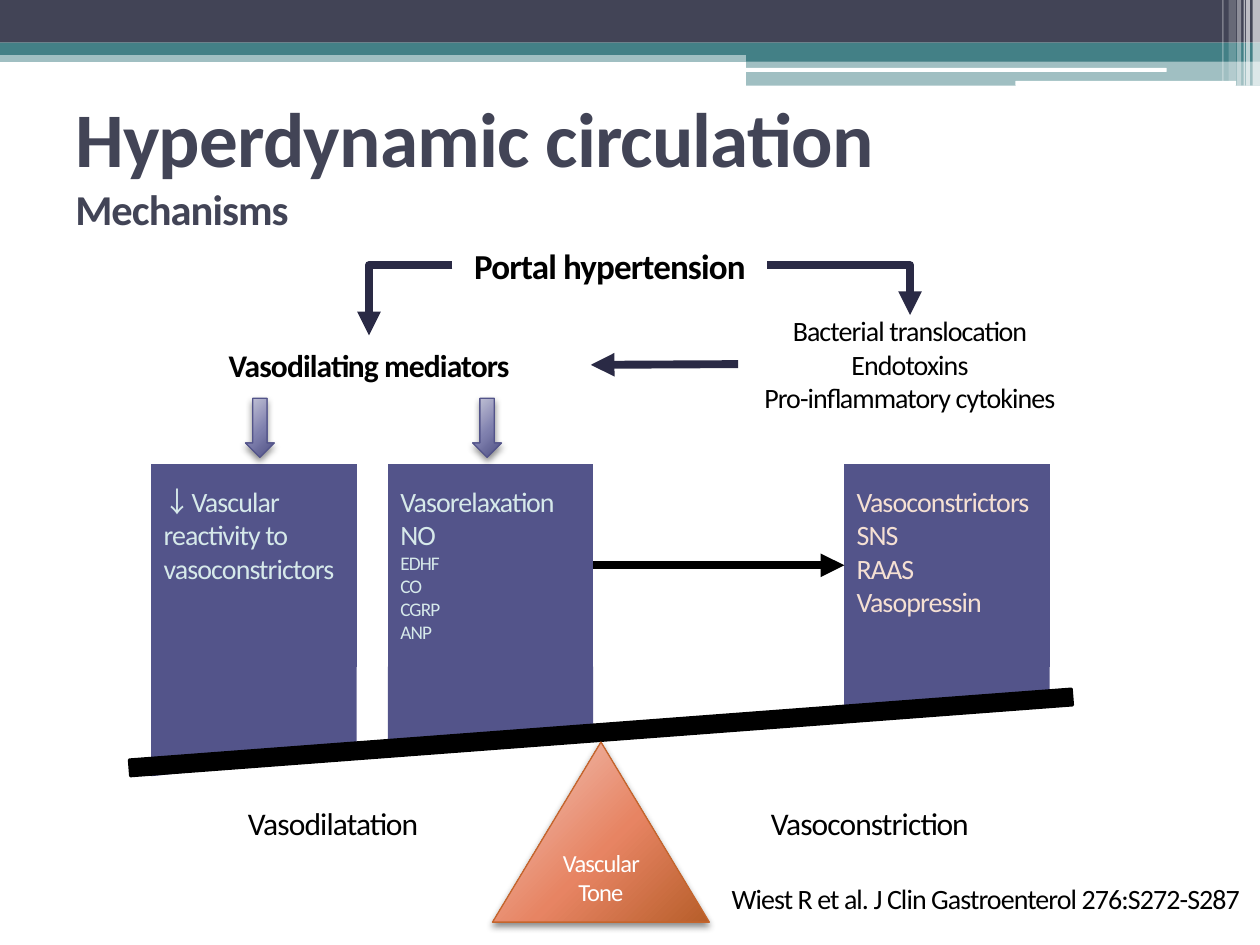
from dataclasses import dataclass
from typing import Optional

from lxml.etree import SubElement
from pptx import Presentation
from pptx.dml.color import RGBColor
from pptx.enum.shapes import MSO_CONNECTOR, MSO_SHAPE
from pptx.enum.text import MSO_ANCHOR, MSO_AUTO_SIZE, PP_ALIGN
from pptx.oxml import parse_xml
from pptx.oxml.ns import nsdecls, qn
from pptx.util import Cm, Pt

FONT = "Calibri"
ARROW_FONT = "Noto Sans CJK KR"
WHITE = RGBColor(0xFF, 0xFF, 0xFF)
BLACK = RGBColor(0x00, 0x00, 0x00)
SLATE = RGBColor(0x42, 0x44, 0x56)
TEAL = RGBColor(0x43, 0x80, 0x86)
VIOLET = RGBColor(0x53, 0x54, 0x8A)
NAVY = RGBColor(0x2A, 0x2A, 0x45)
MINT = RGBColor(0xD6, 0xE9, 0xEA)
PEACH = RGBColor(0xF5, 0xE0, 0xD3)
RUST = RGBColor(0xC4, 0x65, 0x2D)
LILAC_FADE = (RGBColor(0xC9, 0xC9, 0xDA), RGBColor(0x7F, 0x80, 0xAE),
              RGBColor(0x4D, 0x4E, 0x81))
CORAL_FADE = (RGBColor(0xF2, 0xC9, 0xBF), RGBColor(0xE7, 0x84, 0x63),
              RGBColor(0xB7, 0x5E, 0x2A))


@dataclass
class Band:
    x: float
    y: float
    w: float
    h: float
    color: RGBColor
    alpha: int = 100
    kind: MSO_SHAPE = MSO_SHAPE.RECTANGLE


@dataclass
class Line:
    text: str
    size: float = 16


@dataclass
class Column:
    x: float
    base: float
    color: RGBColor
    lines: list[Line]


@dataclass
class Label:
    x: float
    y: float
    w: float
    h: float
    lines: list[Line]
    bold: bool = False


BANDS = [
    Band(0, 1.02, 25.4, 0.23, TEAL, 50),
    Band(0, 0, 25.4, 0.86, SLATE),
    Band(0, 0.86, 25.4, 0.25, TEAL),
    Band(15.04, 0.99, 10.36, 0.25, TEAL),
    Band(15.04, 1.22, 10.36, 0.51, TEAL, 50),
    Band(15.01, 1.37, 8.51, 0.08, WHITE, 100, MSO_SHAPE.ROUNDED_RECTANGLE),
    Band(20.47, 1.63, 4.45, 0.1, WHITE, 100, MSO_SHAPE.ROUNDED_RECTANGLE),
    Band(25.25, 0, 0.15, 1.73, WHITE, 65),
    Band(25.12, 0, 0.08, 1.73, WHITE, 65),
    Band(25.07, 0, 0.03, 1.73, WHITE, 60),
    Band(24.94, 0, 0.08, 1.73, WHITE, 40),
    Band(24.77, 0, 0.15, 1.63, WHITE, 20),
    Band(24.64, 0, 0.03, 1.63, WHITE, 30),
]
COLUMNS = [
    Column(3.05, 2.21, MINT, [Line("↓Vascular reactivity to vasoconstrictors")]),
    Column(7.82, 1.6, MINT, [Line("Vasorelaxation"), Line("NO"), Line("EDHF", 11),
                             Line("CO", 11), Line("CGRP", 11), Line("ANP", 11)]),
    Column(17.02, 0.84, PEACH, [Line("Vasoconstrictors"), Line("SNS"),
                                Line("RAAS"), Line("Vasopressin")]),
]
CAUSES = [
    Label(9.12, 4.75, 6.35, 1.19, [Line("Portal hypertension", 20)], True),
    Label(2.97, 6.76, 8.94, 1.19, [Line("Vasodilating mediators", 18)], True),
    Label(14.88, 6.35, 6.93, 1.98, [Line("Bacterial translocation"),
                                    Line("Endotoxins"),
                                    Line("Pro-inflammatory cytokines")]),
]
NOTES = [
    Label(4.75, 16.08, 3.96, 1.02, [Line("Vasodilatation", 18)]),
    Label(15.29, 16.08, 4.52, 1.02, [Line("Vasoconstriction", 18)]),
    Label(14.5, 17.65, 10.9, 0.94,
          [Line("Wiest R et al. J Clin Gastroenterol 276:S272-S287")]),
]


def draw(shapes, kind: MSO_SHAPE, x: float, y: float, w: float, h: float,
         color: Optional[RGBColor] = None):
    shape = shapes.add_shape(kind, Cm(x), Cm(y), Cm(w), Cm(h))
    shape.shadow.inherit = False
    shape.line.fill.background()
    if color is None:
        shape.fill.background()
    else:
        shape.fill.solid()
        shape.fill.fore_color.rgb = color
    return shape


def style(para, color: RGBColor, size: Optional[float] = None,
          bold: bool = False, align: PP_ALIGN = PP_ALIGN.LEFT) -> None:
    para.alignment = align
    font = para.font
    font.name, font.bold = FONT, bold
    font.color.rgb = color
    if size:
        font.size = Pt(size)
    para._p.pPr.find(qn("a:defRPr")).set("spc", "-50")
    for run in para.runs:
        run._r.get_or_add_rPr().set("spc", "-50")


def write(shape, lines: list[Line], color: RGBColor, bold: bool = False,
          align: PP_ALIGN = PP_ALIGN.LEFT) -> None:
    frame = shape.text_frame
    for i, line in enumerate(lines):
        para = frame.add_paragraph() if i else frame.paragraphs[0]
        if line.text.startswith("↓"):
            mark = para.add_run()
            mark.text = "↓"
            mark.font.name = ARROW_FONT
        para.add_run().text = line.text.lstrip("↓")
        style(para, color, line.size, bold, align)


def paint(band: Band, shapes) -> None:
    shape = draw(shapes, band.kind, band.x, band.y, band.w, band.h, band.color)
    if band.alpha < 100:
        tint = shape._element.spPr.find(qn("a:solidFill"))[0]
        SubElement(tint, qn("a:alpha")).set("val", str(band.alpha * 1000))


def shade(shape, fade: tuple, edge: RGBColor) -> None:
    stops = "".join(f'<a:gs pos="{pos}000"><a:srgbClr val="{color}"/></a:gs>'
                    for pos, color in zip((0, 55, 100), fade))
    props = shape._element.spPr
    props.replace(props.find(qn("a:noFill")), parse_xml(
        f'<a:gradFill {nsdecls("a")}><a:gsLst>{stops}</a:gsLst><a:path path="circle">'
        '<a:fillToRect l="-40000" t="-90000" r="140000" b="190000"/>'
        '</a:path></a:gradFill>'))
    props.find(qn("a:effectLst")).append(parse_xml(
        f'<a:outerShdw {nsdecls("a")} blurRad="50800" dist="25400" dir="5400000">'
        '<a:srgbClr val="000000"><a:alpha val="45000"/></a:srgbClr></a:outerShdw>'))
    shape.line.color.rgb = edge
    shape.line.width = Pt(0.75)


def stack(col: Column, shapes):
    group = shapes.add_group_shape().shapes
    box = draw(group, MSO_SHAPE.FLOWCHART_PROCESS, col.x, 9.35, 4.14, 4.09, VIOLET)
    frame = box.text_frame
    frame.word_wrap = True
    frame.vertical_anchor = MSO_ANCHOR.TOP
    frame.margin_left = frame.margin_right = Cm(0.25)
    frame.margin_top, frame.margin_bottom = Cm(0.41), Cm(0.13)
    write(box, col.lines, col.color)
    foot = draw(group, MSO_SHAPE.FLOWCHART_MANUAL_INPUT,
                col.x, 13.44, 4.14, col.base, VIOLET)
    for flip in ("flipH", "flipV"):
        foot._element.spPr.xfrm.set(flip, "1")
    return box


def cause(item: Label, shapes):
    box = draw(shapes, MSO_SHAPE.ROUNDED_RECTANGLE, item.x, item.y, item.w, item.h)
    box.text_frame.word_wrap = True
    box.text_frame.vertical_anchor = MSO_ANCHOR.MIDDLE
    write(box, item.lines, BLACK, item.bold, PP_ALIGN.CENTER)
    return box


def note(item: Label, shapes) -> None:
    box = shapes.add_textbox(Cm(item.x), Cm(item.y), Cm(item.w), Cm(item.h))
    box.text_frame.word_wrap = False
    box.text_frame.auto_size = MSO_AUTO_SIZE.SHAPE_TO_FIT_TEXT
    write(box, item.lines, BLACK)


def link(shapes, start, out: int, color: RGBColor, end=None, into: int = 0,
         point: tuple = (0, 0), bent: bool = False) -> None:
    kind = MSO_CONNECTOR.ELBOW if bent else MSO_CONNECTOR.STRAIGHT
    x, y = (Cm(v) for v in point)
    wire = shapes.add_connector(kind, x, y, x, y)
    wire.begin_connect(start, out)
    if end is not None:
        wire.end_connect(end, into)
    wire.line.color.rgb = color
    wire.line.width = Pt(4.5)
    props = wire._element.spPr
    if bent:
        props.find(qn("a:prstGeom")).set("prst", "bentConnector2")
    SubElement(props.find(qn("a:ln")), qn("a:tailEnd")).set("type", "triangle")
    SubElement(props, qn("a:effectLst"))


def title(shapes) -> None:
    box = shapes.add_textbox(Cm(1.27), Cm(1.78), Cm(22.86), Cm(2.97))
    box.text_frame.word_wrap = True
    box.text_frame.vertical_anchor = MSO_ANCHOR.MIDDLE
    para = box.text_frame.paragraphs[0]
    for i, line in enumerate([Line("Hyperdynamic circulation", 44.1),
                              Line("Mechanisms", 24.3)]):
        if i:
            para.add_line_break()
        run = para.add_run()
        run.text = line.text
        run.font.size = Pt(line.size)
    style(para, SLATE, bold=True)


def main() -> None:
    deck = Presentation()
    deck.slide_width, deck.slide_height = Cm(25.4), Cm(19.05)
    shapes = deck.slides.add_slide(deck.slide_layouts[6]).shapes
    for band in BANDS:
        paint(band, shapes)
    title(shapes)
    _, relax, tight = [stack(col, shapes) for col in COLUMNS]
    beam = draw(shapes, MSO_SHAPE.FLOWCHART_PROCESS, 2.59, 14.6, 19.05, 0.33, BLACK)
    beam.line.color.rgb = BLACK
    beam.line.width = Pt(1.5)
    beam.rotation = 355.7
    tone = draw(shapes, MSO_SHAPE.ISOSCELES_TRIANGLE, 9.93, 14.96, 4.37, 3.63)
    shade(tone, CORAL_FADE, RUST)
    tone.text_frame.word_wrap = True
    tone.text_frame.vertical_anchor = MSO_ANCHOR.MIDDLE
    write(tone, [Line("Vascular Tone", 14)], WHITE, align=PP_ALIGN.CENTER)
    portal, dilate, toxin = [cause(item, shapes) for item in CAUSES]
    for x in (4.95, 9.53):
        shade(draw(shapes, MSO_SHAPE.DOWN_ARROW, x, 8.03, 0.58, 1.19),
              LILAC_FADE, VIOLET)
    link(shapes, toxin, 1, NAVY, dilate, 3)
    link(shapes, portal, 3, NAVY, toxin, 0, bent=True)
    link(shapes, portal, 1, NAVY, dilate, 0, bent=True)
    link(shapes, relax, 3, BLACK, tight, 1)
    for item in NOTES:
        note(item, shapes)
    deck.save("out.pptx")


if __name__ == "__main__":
    main()
